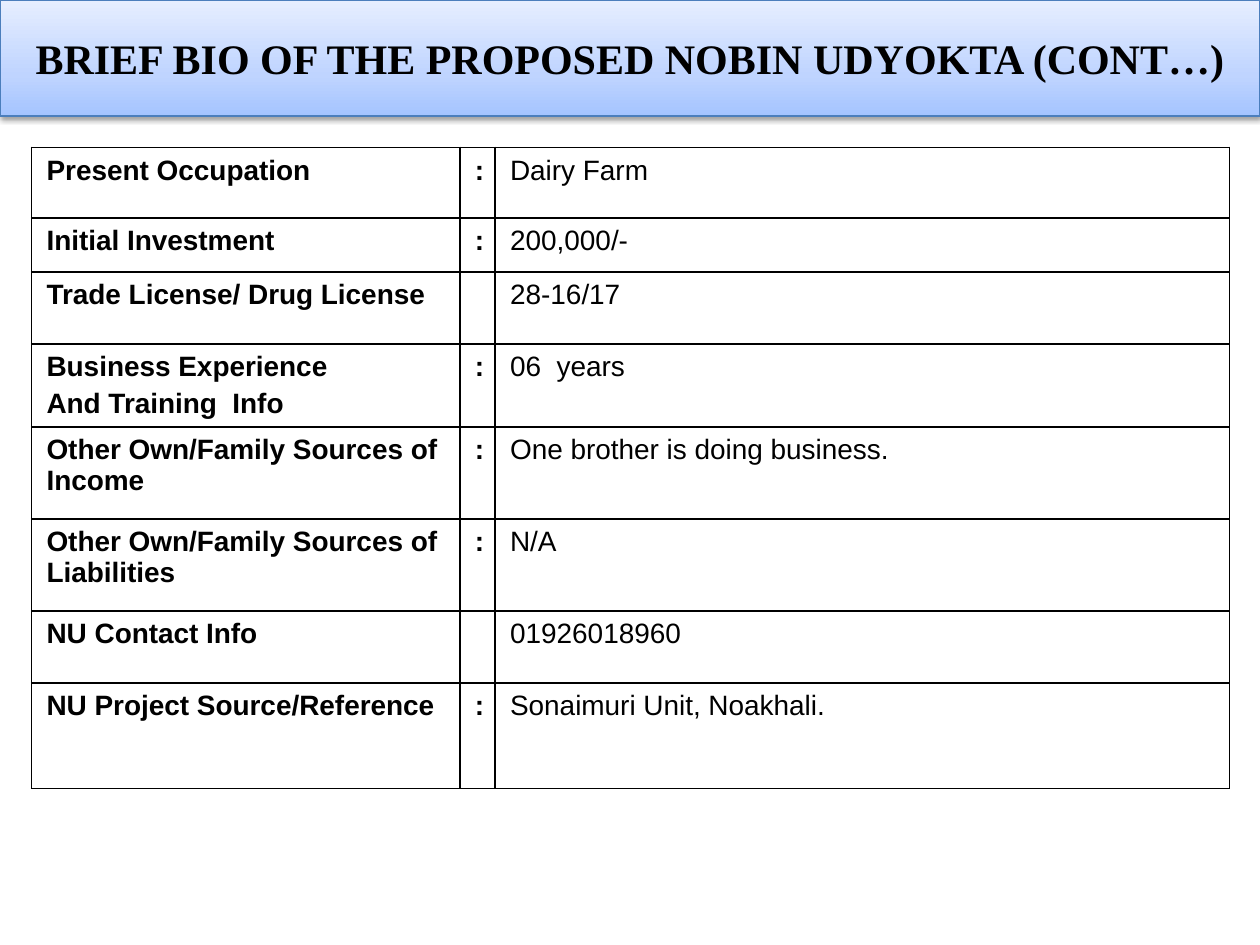
from lxml import etree
from pptx import Presentation
from pptx.dml.color import RGBColor
from pptx.enum.text import MSO_ANCHOR, MSO_AUTO_SIZE, PP_ALIGN
from pptx.oxml import parse_xml
from pptx.oxml.ns import nsdecls, qn
from pptx.util import Inches, Pt

CENTER, LEFT = PP_ALIGN.CENTER, PP_ALIGN.LEFT
MIDDLE, NO_FIT = MSO_ANCHOR.MIDDLE, MSO_AUTO_SIZE.NONE

COLORS = {"ink": "000000", "edge": "4B7EBC",
          "low": "A4C4FF", "mid": "BFD4FF", "high": "E6EEFF"}
TITLE = "BRIEF BIO OF THE PROPOSED NOBIN UDYOKTA (CONT…)"
COLS = [3.4, 0.27, 5.83]
# label, mark, value, row height
ROWS = [
    ("Present Occupation", ":", "Dairy Farm", 0.56),
    ("Initial Investment", ":", "200,000/-", 0.43),
    ("Trade License/ Drug License", "", "28-16/17", 0.57),
    ("Business Experience\nAnd Training  Info", ":", "06  years", 0.66),
    ("Other Own/Family Sources of Income", ":",
     "One brother is doing business.", 0.73),
    ("Other Own/Family Sources of Liabilities", ":", "N/A", 0.73),
    ("NU Contact Info", "", "01926018960", 0.57),
    ("NU Project Source/Reference", ":", "Sonaimuri Unit, Noakhali.", 0.84),
]


def put_text(frame, text, font="Arial", size=16, bold=False, align=LEFT):
    for i, line in enumerate(text.split("\n")):
        para = frame.add_paragraph() if i else frame.paragraphs[0]
        para.alignment = align
        para.space_before = Pt(3.2 if i else 0)
        run = para.add_run()
        run.text = line
        run.font.name, run.font.size, run.font.bold = font, Pt(size), bold
        run.font.color.rgb = RGBColor.from_string(COLORS["ink"])


def add_title(slide):
    bar = slide.shapes.title
    bar.left, bar.top = Inches(0), Inches(0)
    bar.width, bar.height = Inches(10), Inches(0.92)
    bar.line.color.rgb = RGBColor.from_string(COLORS["edge"])
    bar.line.width = Pt(0.75)
    stops = "".join(
        f'<a:gs pos="{pos * 1000}"><a:srgbClr val="{COLORS[name]}"/></a:gs>'
        for pos, name in ((0, "low"), (35, "mid"), (100, "high")))
    line = bar.line._get_or_add_ln()
    line.addprevious(parse_xml(
        f'<a:gradFill {nsdecls("a")} rotWithShape="1"><a:gsLst>{stops}</a:gsLst>'
        '<a:lin ang="16200000" scaled="0"/></a:gradFill>'))
    line.addnext(parse_xml(
        f'<a:effectLst {nsdecls("a")}><a:outerShdw blurRad="{Pt(3.1)}" '
        f'dist="{Pt(1.6)}" dir="5400000" rotWithShape="0">'
        f'<a:srgbClr val="{COLORS["ink"]}"><a:alpha val="38000"/></a:srgbClr>'
        '</a:outerShdw></a:effectLst>'))
    frame = bar.text_frame
    frame.word_wrap, frame.auto_size = True, NO_FIT
    frame.vertical_anchor = MIDDLE
    put_text(frame, TITLE, font="Times New Roman", size=24, bold=True,
             align=CENTER)


def add_borders(cell):
    props = cell._tc.get_or_add_tcPr()
    for side in ("a:lnL", "a:lnR", "a:lnT", "a:lnB"):
        line = etree.SubElement(props, qn(side), w=str(Pt(1)))
        fill = etree.SubElement(line, qn("a:solidFill"))
        etree.SubElement(fill, qn("a:srgbClr"), val=COLORS["ink"])


def add_bio(slide):
    high = sum(row[-1] for row in ROWS)
    table = slide.shapes.add_table(
        len(ROWS), len(COLS), Inches(0.25), Inches(1.17),
        Inches(sum(COLS)), Inches(high)).table
    table.first_row = table.horz_banding = False
    for col, width in zip(table.columns, COLS):
        col.width = Inches(width)
    for row, (*texts, height) in zip(table.rows, ROWS):
        row.height = Inches(height)
        for i, (cell, text) in enumerate(zip(row.cells, texts)):
            cell.margin_left = cell.margin_right = Inches(0.12)
            cell.margin_top = cell.margin_bottom = Inches(0.06)
            add_borders(cell)
            cell.fill.background()
            if text:
                put_text(cell.text_frame, text, bold=i < 2)


def main():
    deck = Presentation()
    deck.slide_width, deck.slide_height = Inches(10), Inches(7.5)
    slide = deck.slides.add_slide(deck.slide_layouts[5])
    add_title(slide)
    add_bio(slide)
    deck.save("out.pptx")


if __name__ == "__main__":
    main()
